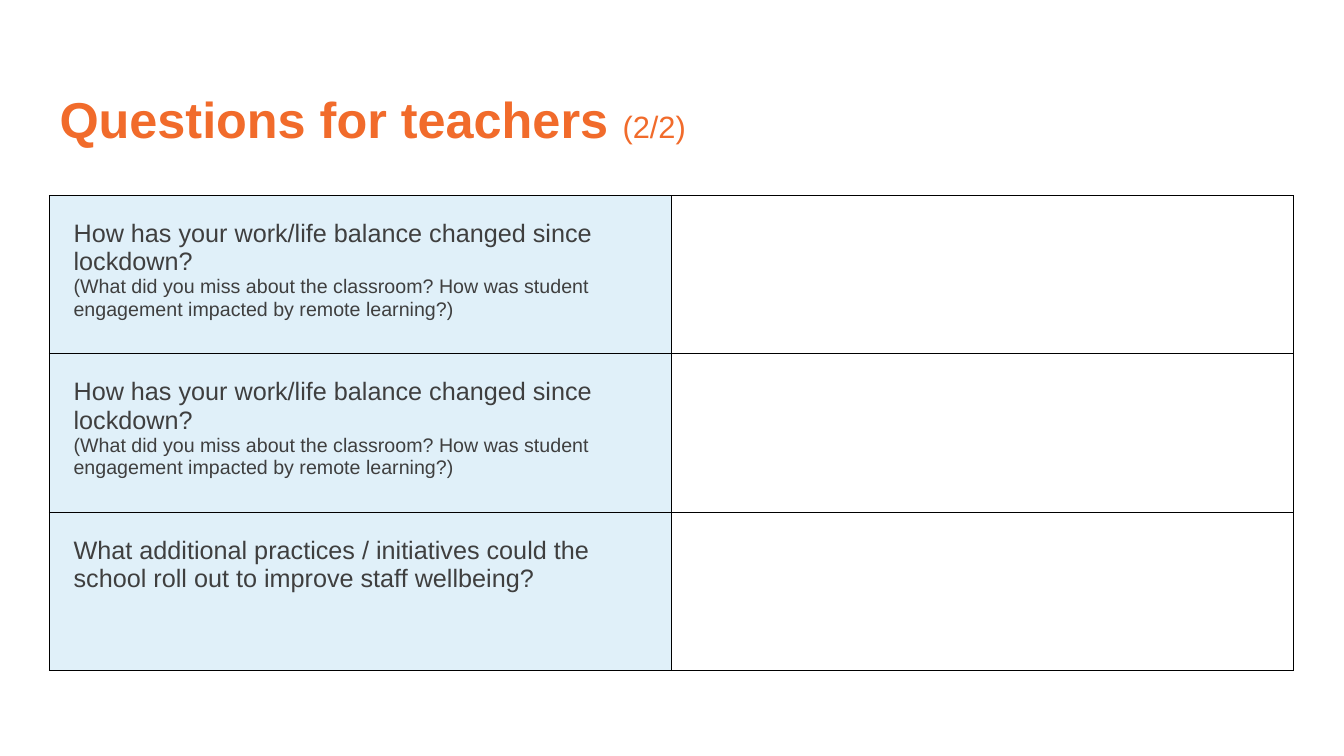
from dataclasses import dataclass

from lxml.etree import SubElement as Sub
from pptx import Presentation
from pptx.dml.color import RGBColor as Rgb
from pptx.enum.text import MSO_ANCHOR as Anchor, PP_ALIGN as Align
from pptx.oxml.ns import qn
from pptx.slide import Slide
from pptx.table import _Cell as Cell
from pptx.text.text import Font
from pptx.util import Inches, Pt


@dataclass(frozen=True)
class Theme:
    font: str = "Arial"
    orange: str = "F16B2B"
    ink: str = "3F3F3F"
    tint: str = "E0F0F9"
    blank: str = "FFFFFF"
    rule: str = "000000"
    title: int = 36
    count: int = 22
    ask: int = 18
    hint: int = 14
    line: float = 0.75


@dataclass(frozen=True)
class Grid:
    """Lengths in inches: a left edge and equal columns and rows."""
    left: float = 0.49
    top: float = 1.94
    col: float = 6.17
    row: float = 1.57
    pad: float = 0.24


@dataclass(frozen=True)
class Topic:
    ask: str
    hint: str = ""


THEME = Theme()
GRID = Grid()
BALANCE = Topic(
    "How has your work/life balance changed since lockdown?",
    "(What did you miss about the classroom? "
    "How was student engagement impacted by remote learning?)",
)
TOPICS = [
    BALANCE,
    BALANCE,
    Topic("What additional practices / initiatives could the school "
          "roll out to improve staff wellbeing?"),
]


def style(font: Font, size: int, color: str, bold: bool = False) -> None:
    font.name = THEME.font
    font.size = Pt(size)
    font.bold = bold
    font.color.rgb = Rgb.from_string(color)


def add_title(slide: Slide, text: str, count: str) -> None:
    title = slide.shapes.title
    title.left, title.top = Inches(GRID.left), Inches(0.49)
    title.width, title.height = Inches(11.5), Inches(1.45)
    frame = title.text_frame
    frame.word_wrap = True
    frame.vertical_anchor = Anchor.MIDDLE
    para = frame.paragraphs[0]
    para.text = text
    para.alignment = Align.LEFT
    para.line_spacing = 0.9
    style(para.runs[0].font, THEME.title, THEME.orange, True)
    run = para.add_run()
    run.text = count
    style(run.font, THEME.count, THEME.orange)


def paint(cell: Cell, color: str) -> None:
    """Fill a cell and rule all four of its sides."""
    cell.fill.solid()
    cell.fill.fore_color.rgb = Rgb.from_string(color)
    props = cell._tc.get_or_add_tcPr()
    for spot, side in enumerate(("lnL", "lnR", "lnT", "lnB")):
        line = Sub(props, qn(f"a:{side}"), w=str(Pt(THEME.line)))
        Sub(Sub(line, qn("a:solidFill")), qn("a:srgbClr"), val=THEME.rule)
        props.insert(spot, line)


def write(cell: Cell, topic: Topic) -> None:
    pad = Inches(GRID.pad)
    cell.margin_left = cell.margin_right = pad
    cell.margin_top = cell.margin_bottom = pad
    frame = cell.text_frame
    frame.text = topic.ask
    style(frame.paragraphs[0].runs[0].font, THEME.ask, THEME.ink)
    if topic.hint:
        para = frame.add_paragraph()
        para.text = topic.hint
        style(para.runs[0].font, THEME.hint, THEME.ink)


def add_topics(slide: Slide, topics: list[Topic]) -> None:
    table = slide.shapes.add_table(
        len(topics), 2, Inches(GRID.left), Inches(GRID.top),
        Inches(2 * GRID.col), Inches(len(topics) * GRID.row)).table
    table.first_row = table.horz_banding = False
    for col in table.columns:
        col.width = Inches(GRID.col)
    for row, topic in zip(table.rows, topics):
        row.height = Inches(GRID.row)
        left, right = row.cells
        write(left, topic)
        paint(left, THEME.tint)
        paint(right, THEME.blank)


def main() -> None:
    deck = Presentation()
    deck.slide_width, deck.slide_height = Inches(13.33), Inches(7.5)
    slide = deck.slides.add_slide(deck.slide_layouts[5])

    # Heading with page count
    add_title(slide, "Questions for teachers ", "(2/2)")

    # Questions on the left, room for answers on the right
    add_topics(slide, TOPICS)

    deck.save("out.pptx")


if __name__ == "__main__":
    main()
